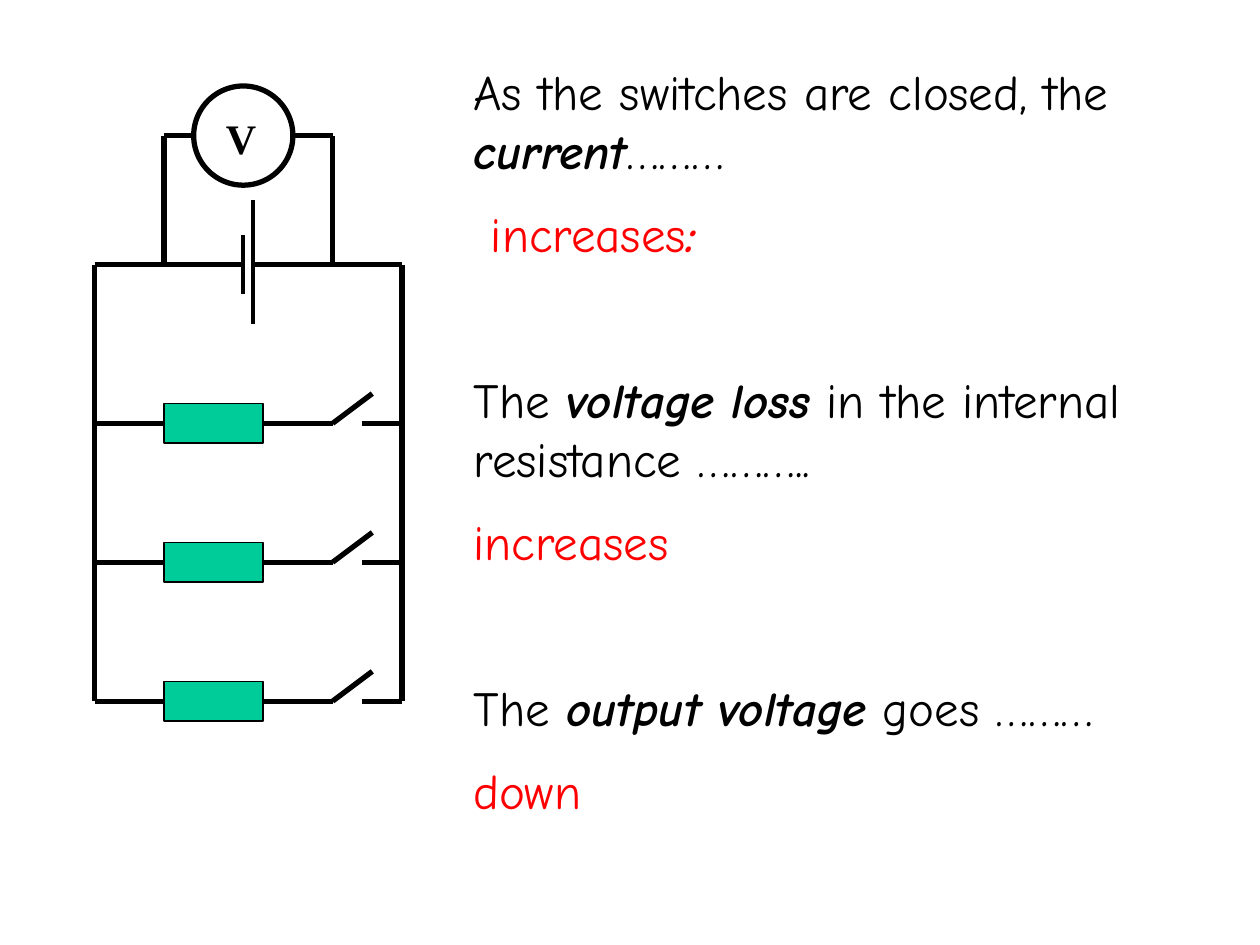
from dataclasses import dataclass
from typing import NamedTuple

from lxml import etree
from pptx import Presentation
from pptx.dml.color import RGBColor
from pptx.enum.shapes import MSO_CONNECTOR, MSO_SHAPE
from pptx.oxml.ns import qn
from pptx.util import Inches, Mm, Pt

LINE = MSO_CONNECTOR.STRAIGHT
RECT = MSO_SHAPE.RECTANGLE
OVAL = MSO_SHAPE.OVAL


@dataclass(frozen=True)
class Theme:
    ink: RGBColor = RGBColor(0, 0, 0)
    answer: RGBColor = RGBColor(255, 0, 0)
    resistor: RGBColor = RGBColor(0, 204, 153)
    font: str = "Comic Neue"
    meter_font: str = "Times New Roman"
    body: float = 28
    meter: float = 24
    wire: float = 3
    plate: float = 2.25
    edge: float = 0.75
    gap: float = 14
    block_gap: float = 61


class Wire(NamedTuple):
    x1: float
    y1: float
    x2: float
    y2: float
    width: float = 3


class Run(NamedTuple):
    text: str
    strong: bool = False


class Para(NamedTuple):
    runs: list[Run]
    color: RGBColor
    before: float


THEME = Theme()
STEP = Mm(2)  # one grid cell; the grid starts at the circuit's top left corner
LEFT, TOP = Inches(0.75), Inches(2.1)
RIGHT = 31
METER_ROW = -13
TAPS = (7, 24)
BRANCHES = (16, 30, 44)

prs = Presentation()
prs.slide_width, prs.slide_height = Inches(10), Inches(7.5)
slide = prs.slides.add_slide(prs.slide_layouts[6])


def col(x: float) -> int:
    return int(LEFT + x * STEP)


def row(y: float) -> int:
    return int(TOP + y * STEP)


def draw_wire(wire: Wire) -> None:
    line = slide.shapes.add_connector(
        LINE, col(wire.x1), row(wire.y1), col(wire.x2), row(wire.y2))
    line.line.color.rgb = THEME.ink
    line.line.width = Pt(wire.width)
    etree.SubElement(line._element.spPr, qn("a:effectLst"))


def draw_part(kind: int, x: float, y: float, w: float, h: float,
              width: float, fill: RGBColor | None = None) -> None:
    part = slide.shapes.add_shape(
        kind, col(x), row(y), int(w * STEP), int(h * STEP))
    part.shadow.inherit = False
    part.line.color.rgb = THEME.ink
    part.line.width = Pt(width)
    if fill is None:
        part.fill.background()
    else:
        part.fill.solid()
        part.fill.fore_color.rgb = fill


def draw_text(x: int, y: int, w: int, h: int, paras: list[Para],
              font: str, size: float) -> None:
    frame = slide.shapes.add_textbox(x, y, w, h).text_frame
    frame.word_wrap = True
    for i, para in enumerate(paras):
        item = frame.add_paragraph() if i else frame.paragraphs[0]
        item.space_before = Pt(para.before)
        for text, strong in para.runs:
            run = item.add_run()
            run.text = text
            run.font.name, run.font.size = font, Pt(size)
            run.font.bold = run.font.italic = strong
            run.font.color.rgb = para.color


def draw_branch(y: float) -> None:
    draw_part(RECT, 7, y - 2, 10, 4, THEME.edge, THEME.resistor)
    for wire in (Wire(0, y, 7, y), Wire(17, y, 24, y),
                 Wire(24, y, 28, y - 3), Wire(27, y, RIGHT, y)):
        draw_wire(wire)


# Cell and outer loop
for wire in (Wire(15, -3, 15, 3, THEME.plate),
             Wire(16, -6.5, 16, 6, THEME.plate),
             Wire(0, 0, 15, 0), Wire(16, 0, RIGHT, 0)):
    draw_wire(wire)
for side in (0, RIGHT):
    draw_wire(Wire(side, 0, side, BRANCHES[-1]))

# Resistors with switches
for level in BRANCHES:
    draw_branch(level)

# Voltmeter
for tap, rim in zip(TAPS, (10, 20)):
    draw_wire(Wire(tap, 0, tap, METER_ROW))
    draw_wire(Wire(tap, METER_ROW, rim, METER_ROW))
draw_part(OVAL, 10, METER_ROW - 5, 10, 10, THEME.wire)
draw_text(col(12), row(-16), 7 * STEP, 6 * STEP,
          [Para([Run("V")], THEME.ink, 0)], THEME.meter_font, THEME.meter)
meter = slide.shapes[-1].text_frame.paragraphs[0].runs[0]
meter.font.bold = True

# Questions and answers
NOTES = [
    ([Run("As the switches are closed, the "), Run("current", True),
      Run("………")],
     [Run(" ", True), Run("increases"), Run(":", True)]),
    ([Run("The "), Run("voltage loss", True),
      Run(" in the internal resistance ………..")],
     [Run("increases")]),
    ([Run("The "), Run("output voltage", True), Run(" goes ………")],
     [Run("down")]),
]
paras = []
for ask, reply in NOTES:
    before = THEME.block_gap if paras else 0
    paras += [Para(ask, THEME.ink, before),
              Para(reply, THEME.answer, THEME.gap)]
draw_text(Inches(3.66), Inches(0.44), Inches(5.59), Inches(6.41),
          paras, THEME.font, THEME.body)

prs.save("out.pptx")
